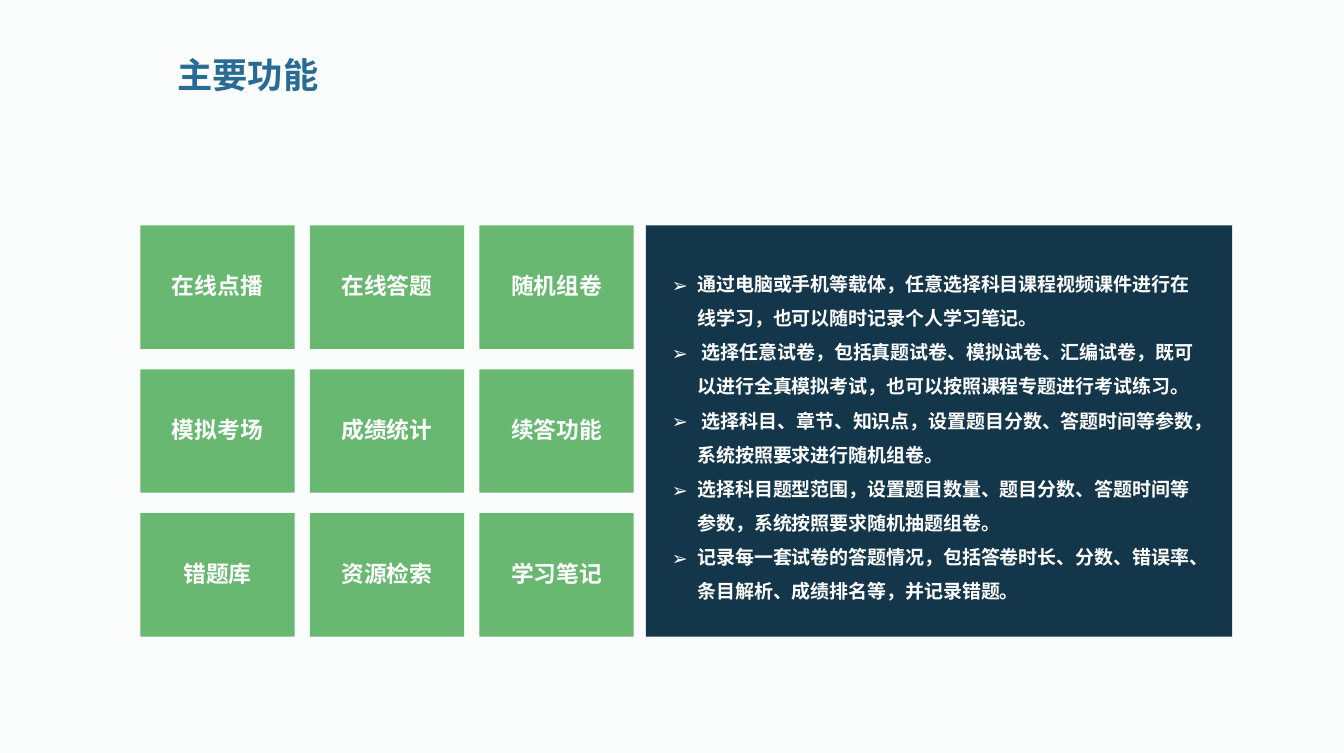
import dataclasses

import pptx
import pptx.dml.color
import pptx.enum.shapes
import pptx.enum.text
import pptx.oxml.ns
import pptx.util
from lxml import etree

Pt = pptx.util.Pt
RGB = pptx.dml.color.RGBColor.from_string
ANCHOR = pptx.enum.text.MSO_ANCHOR
ALIGN = pptx.enum.text.PP_ALIGN
RECTANGLE = pptx.enum.shapes.MSO_SHAPE.RECTANGLE


@dataclasses.dataclass(frozen=True)
class Theme:
    font: str = "Noto Sans CJK SC"
    background: str = "FBFCFC"
    heading: str = "286C95"
    tile: str = "68B872"
    panel: str = "14364A"
    text: str = "FFFFFF"
    heading_size: float = 18.6
    tile_size: float = 12
    detail_size: float = 10


theme = Theme()


def add_run(paragraph, text, size, color):
    run = paragraph.add_run()
    run.text = text
    run.font.size = Pt(size)
    run.font.bold = True
    run.font.color.rgb = RGB(color)
    run.font.name = theme.font
    east_asian = etree.SubElement(run.font._element, pptx.oxml.ns.qn("a:ea"))
    east_asian.set("typeface", theme.font)


def add_block(left, top, width, height, color):
    block = slide.shapes.add_shape(RECTANGLE, Pt(left), Pt(top), Pt(width), Pt(height))
    block.shadow.inherit = False
    block.fill.solid()
    block.fill.fore_color.rgb = RGB(color)
    block.line.fill.background()
    return block


# Slide
deck = pptx.Presentation()
deck.slide_width, deck.slide_height = Pt(708.5), Pt(396.75)
slide = deck.slides.add_slide(deck.slide_layouts[1])
slide.background.fill.solid()
slide.background.fill.fore_color.rgb = RGB(theme.background)

# Heading
heading = slide.shapes.title
heading.left, heading.top, heading.width, heading.height = Pt(93.5), Pt(22.5), Pt(131), Pt(33)
frame = heading.text_frame
frame.margin_left = frame.margin_top = frame.margin_right = frame.margin_bottom = 0
frame.vertical_anchor = ANCHOR.MIDDLE
frame.auto_size = pptx.enum.text.MSO_AUTO_SIZE.NONE
frame.paragraphs[0].alignment = ALIGN.LEFT
add_run(frame.paragraphs[0], "主要功能", theme.heading_size, theme.heading)

# Grid of functions
functions = [
    ["在线点播", "在线答题", "随机组卷"],
    ["模拟考场", "成绩统计", "续答功能"],
    ["错题库", "资源检索", "学习笔记"],
]
grid_left, grid_top = 74, 118.8
tile_width, tile_height = 81.3, 65
column_step, row_step = 89.4, 75.8
for row, names in enumerate(functions):
    for column, name in enumerate(names):
        tile = add_block(grid_left + column * column_step, grid_top + row * row_step,
                         tile_width, tile_height, theme.tile)
        frame = tile.text_frame
        frame.margin_left = frame.margin_top = frame.margin_right = frame.margin_bottom = Pt(3.6)
        frame.vertical_anchor = ANCHOR.MIDDLE
        frame.word_wrap = True
        label = frame.paragraphs[0]
        label.alignment = ALIGN.CENTER
        label.line_spacing = 0.9
        add_run(label, name, theme.tile_size, theme.text)

# Panel behind the details
add_block(340.5, grid_top, 309, 2 * row_step + tile_height, theme.panel)

# Details, brought in front of the panel
descriptions = [
    "通过电脑或手机等载体，任意选择科目课程视频课件进行在线学习，也可以随时记录个人学习笔记。",
    " 选择任意试卷，包括真题试卷、模拟试卷、汇编试卷，既可以进行全真模拟考试，也可以按照课程专题进行考试练习。",
    " 选择科目、章节、知识点，设置题目分数、答题时间等参数，系统按照要求进行随机组卷。",
    "选择科目题型范围，设置题目数量、题目分数、答题时间等参数，系统按照要求随机抽题组卷。",
    "记录每一套试卷的答题情况，包括答卷时长、分数、错误率、条目解析、成绩排名等，并记录错题。",
]
details = slide.placeholders[1]
details.left, details.top, details.width, details.height = Pt(347), Pt(134), Pt(296.5), Pt(188.5)
details.element.getparent().append(details.element)
frame = details.text_frame
frame.word_wrap = True
frame.vertical_anchor = ANCHOR.TOP
frame.auto_size = pptx.enum.text.MSO_AUTO_SIZE.NONE
for index, description in enumerate(descriptions):
    item = frame.paragraphs[0] if index == 0 else frame.add_paragraph()
    properties = item._p.get_or_add_pPr()
    properties.set("marL", str(Pt(13.5)))
    properties.set("indent", str(-Pt(13.5)))
    bullet_font = etree.SubElement(properties, pptx.oxml.ns.qn("a:buFont"))
    bullet_font.set("typeface", theme.font)
    bullet = etree.SubElement(properties, pptx.oxml.ns.qn("a:buChar"))
    bullet.set("char", "➢")
    item.alignment = ALIGN.LEFT
    item.line_spacing = Pt(18)
    item.space_before = Pt(0)
    add_run(item, description, theme.detail_size, theme.text)

deck.save("out.pptx")
